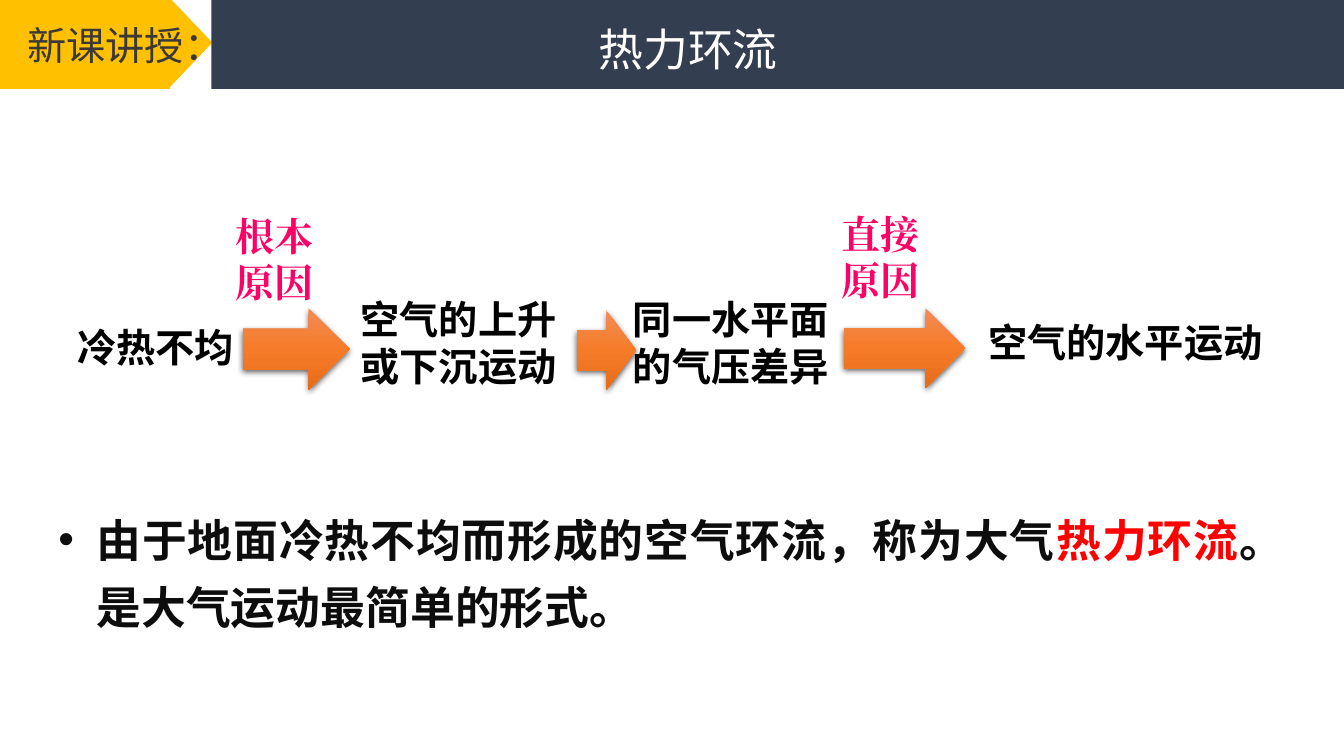
"""Build the lesson slide about thermal circulation."""
import pptx
import pptx.dml.color
import pptx.enum.shapes
import pptx.enum.text
import pptx.oxml
import pptx.oxml.ns
import pptx.util
from pptx.util import Cm

SANS = "Noto Sans CJK SC"
SERIF = "Times New Roman"
SHAPES = pptx.enum.shapes.MSO_SHAPE
ALIGN = pptx.enum.text.PP_ALIGN
ANCHOR = pptx.enum.text.MSO_ANCHOR
NAMESPACE = pptx.oxml.ns.nsdecls("a")
GRADIENT_STOPS = [(0, "F18C57"), (50, "F67B28"), (100, "E56C19")]


def color(value):
    """Turn a hex string into a colour."""
    return pptx.dml.color.RGBColor.from_string(value)


def format_run(run, size, value, bold=False, font=SANS):
    """Set size, colour, weight and typefaces of a run."""
    run.font.size = pptx.util.Pt(size)
    run.font.color.rgb = color(value)
    run.font.bold = bold
    run.font.name = font
    east_asian = pptx.oxml.parse_xml(f'<a:ea {NAMESPACE} typeface="{font}"/>')
    run.font._element.find(pptx.oxml.ns.qn("a:latin")).addnext(east_asian)


def place(shape, box):
    """Move and resize a shape to a box in centimetres."""
    shape.left, shape.top, shape.width, shape.height = map(Cm, box)


def add_block(slide, kind, box, fill, rotation=0):
    """Add a plain filled shape."""
    shape = slide.shapes.add_shape(kind, *map(Cm, box))
    shape.rotation = rotation
    shape.shadow.inherit = False
    shape.fill.solid()
    shape.fill.fore_color.rgb = color(fill)
    shape.line.fill.background()


def add_text(slide, box, text, value="000000", bold=True, font=SANS):
    """Add a wrapped text box and return its paragraphs."""
    frame = slide.shapes.add_textbox(*map(Cm, box)).text_frame
    frame.word_wrap = True
    frame.text = text
    for paragraph in frame.paragraphs:
        for run in paragraph.runs:
            format_run(run, 28, value, bold, font)
    return frame.paragraphs


def add_cause(slide, box, text):
    """Add a two-line pink label above an arrow."""
    for paragraph in add_text(slide, box, text, "FF0066", font=SERIF):
        paragraph.line_spacing = 0.7
        paragraph.space_before = pptx.util.Pt(9)


def add_arrow(slide, box):
    """Add an orange gradient arrow with a soft shadow."""
    shape = slide.shapes.add_shape(SHAPES.RIGHT_ARROW, *map(Cm, box))
    shape.line.fill.background()
    stops = "".join(
        f'<a:gs pos="{position * 1000}"><a:srgbClr val="{value}"/></a:gs>'
        for position, value in GRADIENT_STOPS
    )
    outline = shape.line._ln
    outline.addprevious(pptx.oxml.parse_xml(
        f'<a:gradFill {NAMESPACE} rotWithShape="1"><a:gsLst>{stops}</a:gsLst>'
        '<a:lin ang="5400000" scaled="0"/></a:gradFill>'
    ))
    outline.addnext(pptx.oxml.parse_xml(
        f'<a:effectLst {NAMESPACE}><a:outerShdw blurRad="57150" dist="19050" '
        'dir="5400000" algn="ctr" rotWithShape="0"><a:srgbClr val="000000">'
        '<a:alpha val="63000"/></a:srgbClr></a:outerShdw></a:effectLst>'
    ))


def fill_title(slide, box, text):
    """Put the title above the header bar."""
    title = slide.shapes.title
    place(title, box)
    slide.shapes._spTree.append(title._element)
    frame = title.text_frame
    frame.text = text
    frame.auto_size = pptx.enum.text.MSO_AUTO_SIZE.NONE
    frame.vertical_anchor = ANCHOR.TOP
    frame.paragraphs[0].alignment = ALIGN.LEFT
    format_run(frame.paragraphs[0].runs[0], 32, "FFFFFF")


def fill_definition(slide, box, parts):
    """Write the bulleted definition from pairs of text and colour."""
    body = slide.placeholders[1]
    place(body, box)
    frame = body.text_frame
    frame.auto_size = pptx.enum.text.MSO_AUTO_SIZE.NONE
    frame.vertical_anchor = ANCHOR.TOP
    paragraph = frame.paragraphs[0]
    paragraph.alignment = ALIGN.JUSTIFY
    paragraph.line_spacing = 1.25
    paragraph.space_before = pptx.util.Pt(0)
    paragraph.space_after = pptx.util.Pt(6)
    properties = paragraph._p.get_or_add_pPr()
    properties.set("marL", str(Cm(0.96)))
    properties.set("indent", str(Cm(-0.96)))
    properties.append(pptx.oxml.parse_xml(f'<a:buFont {NAMESPACE} typeface="Arial"/>'))
    properties.append(pptx.oxml.parse_xml(f'<a:buChar {NAMESPACE} char="•"/>'))
    for text, value in parts:
        run = paragraph.add_run()
        run.text = text
        format_run(run, 32, value, bold=True)


def main():
    """Build and save the slide."""
    presentation = pptx.Presentation()
    presentation.slide_width = Cm(33.87)
    presentation.slide_height = Cm(19.05)
    slide = presentation.slides.add_slide(presentation.slide_layouts[1])

    add_block(slide, SHAPES.RECTANGLE, (-0.03, -0.05, 4.32, 2.29), "FFC000")
    add_block(slide, SHAPES.ISOSCELES_TRIANGLE, (3.66, 0.53, 2.29, 1.09), "FFC000", 90)
    section = add_text(slide, (0, 0.41, 5.33, 1.45), "新课讲授：", "3B3838", False)
    section[0].alignment = ALIGN.CENTER
    add_block(slide, SHAPES.RECTANGLE, (5.33, -0.05, 28.54, 2.29), "333F50")
    fill_title(slide, (14.83, 0.41, 11.68, 1.63), "热力环流")

    for box, text in [
        ((1.7, 8.03, 5.33, 1.45), "冷热不均"),
        ((8.84, 7.32, 6.2, 2.64), "空气的上升或下沉运动"),
        ((15.7, 7.32, 5.87, 2.64), "同一水平面的气压差异"),
        ((24.66, 7.9, 7.95, 1.45), "空气的水平运动"),
    ]:
        add_text(slide, box, text)
    for box in [
        (6.12, 7.77, 2.69, 2.06),
        (14.53, 7.82, 1.5, 2.01),
        (21.26, 7.77, 3.07, 2.01),
    ]:
        add_arrow(slide, box)
    add_cause(slide, (5.69, 5.56, 4.01, 2.51), "根本\n原因")
    add_cause(slide, (20.96, 5.51, 4.01, 2.51), "直接\n原因")

    fill_definition(slide, (1.22, 12.45, 31.39, 3.43), [
        ("由于地面冷热不均而形成的空气环流，称为大气", "0D0D0D"),
        ("热力环流", "FF0000"),
        ("。是大气运动最简单的形式。", "0D0D0D"),
    ])
    presentation.save("out.pptx")


if __name__ == "__main__":
    main()
